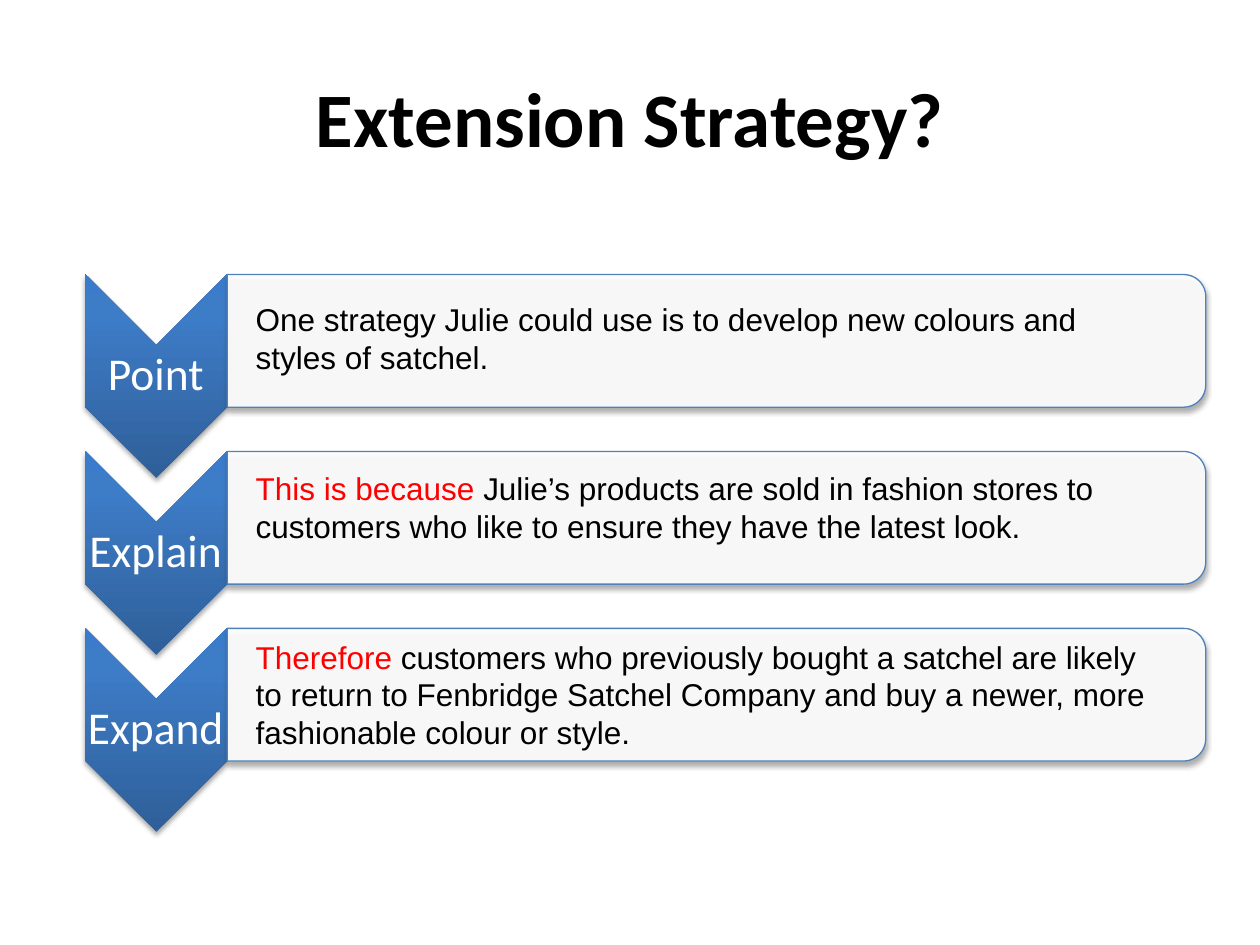
import lxml.etree
import pptx
import pptx.dml.color
import pptx.enum.shapes
import pptx.enum.text
import pptx.oxml
import pptx.oxml.ns
import pptx.util

Pt = pptx.util.Pt
KIND = pptx.enum.shapes.MSO_SHAPE
ALIGN = pptx.enum.text.PP_ALIGN
ANCHOR = pptx.enum.text.MSO_ANCHOR
STEP = 101.1
STEPS = [
    ("Point", 521, [("One strategy Julie could use is to develop new colours "
                     "and styles of satchel.", "000000")]),
    ("Explain", 516, [("This is because", "FF0000"),
                      (" Julie’s products are sold in fashion stores to customers "
                       "who like to ensure they have the latest look.", "000000")]),
    ("Expand", 527, [("Therefore", "FF0000"),
                     (" customers who previously bought a satchel are likely to "
                      "return to Fenbridge Satchel Company and buy a newer, more "
                      "fashionable colour or style.", "000000")]),
]


def color(code):
    return pptx.dml.color.RGBColor.from_string(code)


def node(owner, tag, **attrs):
    return lxml.etree.SubElement(owner, pptx.oxml.ns.qn("a:" + tag), attrs)


def text(slide, box, runs, size, font, bold=False, align=ALIGN.LEFT,
         anchor=ANCHOR.TOP, inset=None, space=None):
    frame = slide.shapes.add_textbox(*map(Pt, box)).text_frame
    frame.word_wrap = True
    frame.vertical_anchor = anchor
    if inset is not None:
        frame.margin_left = frame.margin_right = Pt(inset)
        frame.margin_top = frame.margin_bottom = Pt(inset)
    para = frame.paragraphs[0]
    para.alignment = align
    para.line_spacing = space
    for words, code in runs:
        run = para.add_run()
        run.text = words
        run.font.size = Pt(size)
        run.font.name = font
        run.font.bold = bold
        run.font.color.rgb = color(code)


def shade(shape):
    shape.shadow.inherit = False
    effects = shape.element.spPr.find(pptx.oxml.ns.qn("a:effectLst"))
    outer = node(effects, "outerShdw", blurRad=str(Pt(3.1)), dist=str(Pt(1.8)),
                 dir="5400000", rotWithShape="0")
    black = node(outer, "srgbClr", val="000000")
    node(black, "alpha", val="35000")


def turned(slide, kind, mid_x, mid_y, width, height):
    shape = slide.shapes.add_shape(
        kind, Pt(mid_x - width / 2), Pt(mid_y - height / 2), Pt(width), Pt(height))
    shape.rotation = 90
    shade(shape)
    return shape


def arrow(slide, mid_y):
    shape = turned(slide, KIND.CHEVRON, 89.3, mid_y, 116.6, 81.6)
    shape.line.fill.background()
    shape.fill.gradient()
    grad = shape.element.spPr.find(pptx.oxml.ns.qn("a:gradFill"))
    grad.clear()
    grad.set("rotWithShape", "0")
    stops = node(grad, "gsLst")
    for place, code in ((0, "2F5F99"), (80, "3D7CC7"), (100, "3A7CCB")):
        stop = node(stops, "gs", pos=str(place * 1000))
        node(stop, "srgbClr", val=code)
    node(grad, "lin", ang="16200000", scaled="0")


def panel(slide, mid_y):
    shape = turned(slide, KIND.ROUND_2_SAME_RECTANGLE, 409.4, mid_y, 75.8, 559.2)
    shape.fill.solid()
    shape.fill.fore_color.rgb = color("FFFFFF")
    fill = shape.element.spPr.find(pptx.oxml.ns.qn("a:solidFill"))
    node(fill[0], "alpha", val="90000")
    shape.line.color.rgb = color("4F81BD")
    shape.line.width = Pt(0.75)


def main():
    deck = pptx.Presentation()
    deck.slide_width, deck.slide_height = Pt(720), Pt(540)
    slide = deck.slides.add_slide(deck.slide_layouts[6])
    text(slide, (36, 21.6, 648, 90), [("Extension Strategy?", "000000")], 44,
         "Calibri", bold=True, align=ALIGN.CENTER, anchor=ANCHOR.MIDDLE)
    for row, (label, width, runs) in enumerate(STEPS):
        down = row * STEP
        arrow(slide, 214.8 + down)
        text(slide, (48.2, 197.3 + down, 81.6, 35.3), [(label, "FFFFFF")], 26,
             "Calibri", align=ALIGN.CENTER, anchor=ANCHOR.MIDDLE,
             inset=1.4, space=0.9)
        panel(slide, 194.8 + down)
    for row, (label, width, runs) in enumerate(STEPS):
        height = 72.7 if row == 2 else 51
        text(slide, (139, 167.8 + row * 96.5, width, height), runs, 18, "Arial")
    deck.save("out.pptx")


if __name__ == "__main__":
    main()
